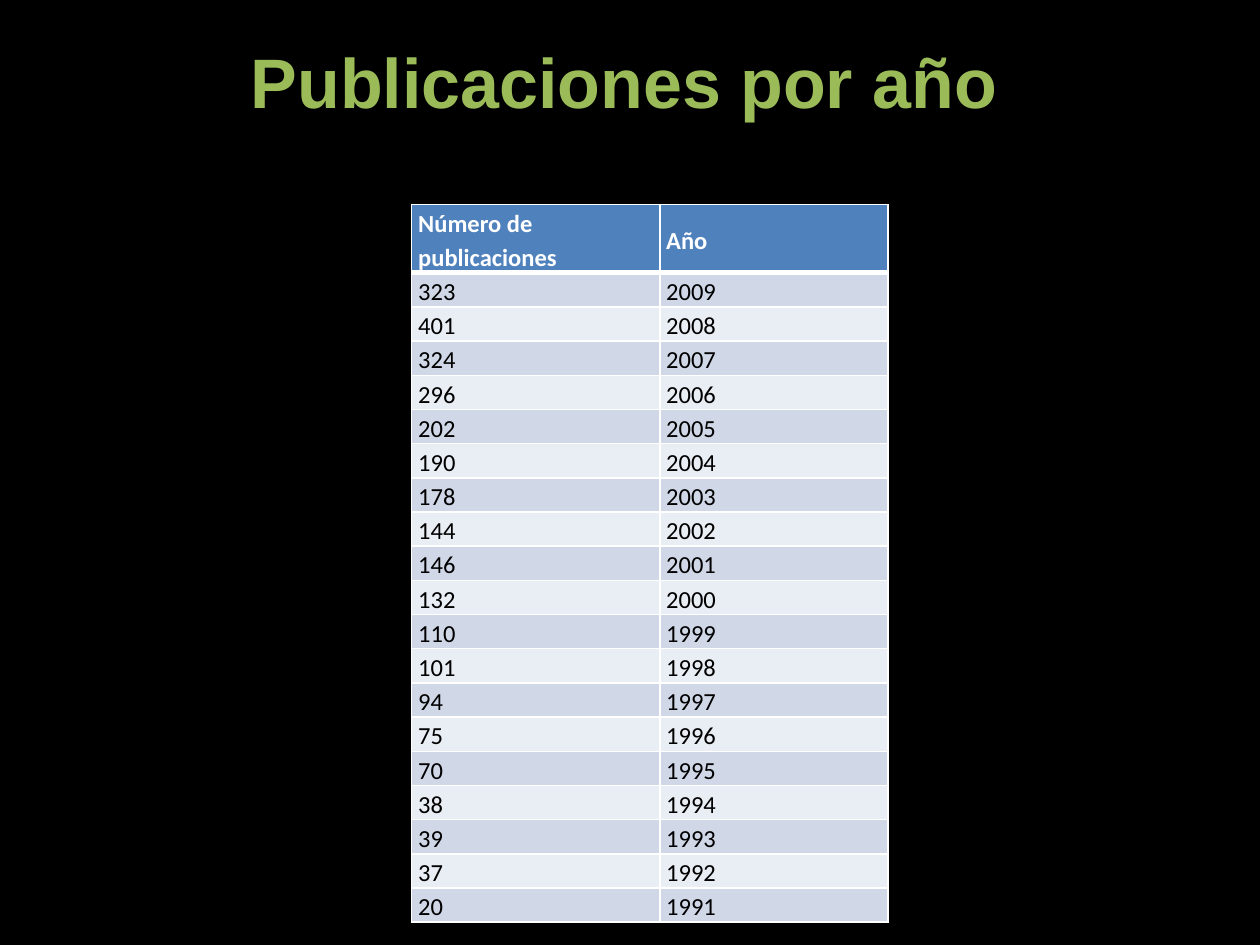
from lxml.etree import SubElement
from pptx import Presentation
from pptx.dml.color import RGBColor
from pptx.enum.text import MSO_ANCHOR, PP_ALIGN
from pptx.oxml.ns import qn
from pptx.util import Cm, Pt

COLORS = {
    "background": "000000",
    "title": "9BBB59",
    "header": "4F81BD",
    "odd row": "D0D8E8",
    "even row": "E9EDF4",
    "light": "FFFFFF",
    "dark": "000000",
}
HEADINGS = ("Número de publicaciones", "Año")
LAST_YEAR = 2009
# Publications per year, from the last year backwards
COUNTS = [323, 401, 324, 296, 202, 190, 178, 144, 146, 132,
          110, 101, 94, 75, 70, 38, 39, 37, 20]


class SlideBuilder:
    """Holds the style and the current slide."""

    title_font = "Arial"
    table_font = "Calibri"

    def __init__(self, slide):
        self.slide = slide

    def color(self, name):
        return RGBColor.from_string(COLORS[name])

    def background(self, color):
        fill = self.slide.background.fill
        fill.solid()
        fill.fore_color.rgb = self.color(color)

    def set_font(self, paragraph, name, size, color, bold):
        font = paragraph.font
        font.name, font.size, font.bold = name, Pt(size), bold
        font.color.rgb = self.color(color)

    def title(self, text, left, top, width, height):
        shape = self.slide.shapes.add_textbox(Cm(left), Cm(top), Cm(width), Cm(height))
        frame = shape.text_frame
        frame.word_wrap = True
        frame.vertical_anchor = MSO_ANCHOR.MIDDLE
        paragraph = frame.paragraphs[0]
        paragraph.text = text
        paragraph.alignment = PP_ALIGN.CENTER
        self.set_font(paragraph, self.title_font, 40, "title", True)

    def border(self, cell, side, width):
        properties = cell._tc.get_or_add_tcPr()
        line = SubElement(properties, qn(f"a:ln{side}"), w=str(Pt(width)))
        fill = SubElement(line, qn("a:solidFill"))
        SubElement(fill, qn("a:srgbClr"), val=COLORS["light"])

    def cell(self, cell, text, row):
        is_header = row == 0
        # Borders come before the fill; a thick rule lies under the header
        widths = {"L": 1, "R": 1, "T": 3 if row == 1 else 1, "B": 3 if is_header else 1}
        for side, width in widths.items():
            self.border(cell, side, width)
        cell.fill.solid()
        fill = "header" if is_header else "odd row" if row % 2 else "even row"
        cell.fill.fore_color.rgb = self.color(fill)
        cell.vertical_anchor = MSO_ANCHOR.MIDDLE
        cell.margin_left = cell.margin_right = Cm(0.13)
        cell.margin_top = cell.margin_bottom = 0
        paragraph = cell.text_frame.paragraphs[0]
        paragraph.text = str(text)
        paragraph.line_spacing = 1.15
        self.set_font(paragraph, self.table_font, 14,
                      "light" if is_header else "dark", is_header)

    def table(self, rows, left, top, column_widths, row_height):
        # The header holds two lines of text
        heights = [2 * row_height] + [row_height] * (len(rows) - 1)
        table = self.slide.shapes.add_table(
            len(rows), len(column_widths), Cm(left), Cm(top),
            Cm(sum(column_widths)), Cm(sum(heights))).table
        for column, width in zip(table.columns, column_widths):
            column.width = Cm(width)
        for index, (values, height) in enumerate(zip(rows, heights)):
            table.rows[index].height = Cm(height)
            for column, value in enumerate(values):
                self.cell(table.cell(index, column), value, index)


def main():
    presentation = Presentation()
    presentation.slide_width, presentation.slide_height = Cm(25.4), Cm(19.05)
    builder = SlideBuilder(presentation.slides.add_slide(presentation.slide_layouts[6]))
    builder.background("background")

    # Heading
    builder.title("Publicaciones por año", 1.15, -0.33, 22.86, 3.89)

    # Publications by year
    rows = [HEADINGS] + [(count, LAST_YEAR - age) for age, count in enumerate(COUNTS)]
    builder.table(rows, 8.3, 4.12, (5, 4.6), 0.69)

    presentation.save("out.pptx")


if __name__ == "__main__":
    main()
